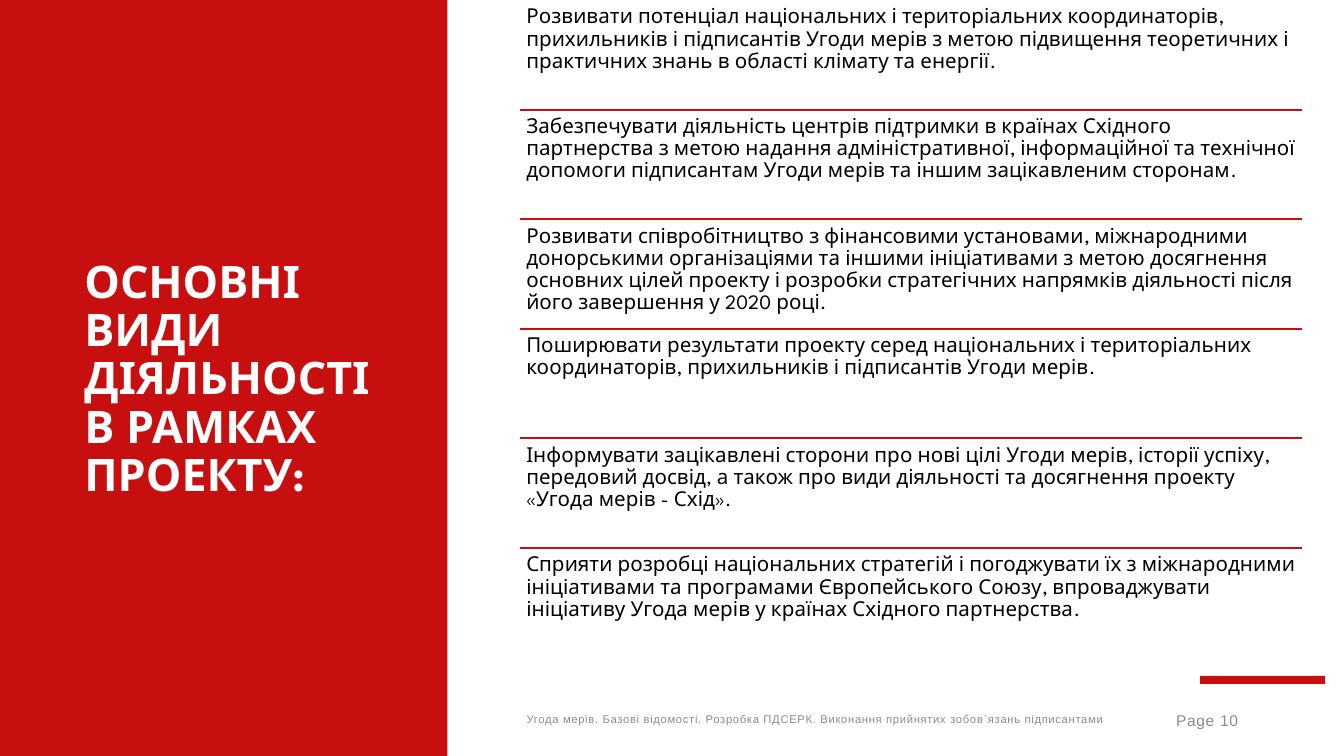
from pptx import Presentation
from pptx.dml.color import RGBColor
from pptx.enum.dml import MSO_LINE
from pptx.enum.shapes import MSO_CONNECTOR, MSO_SHAPE
from pptx.enum.text import MSO_ANCHOR, PP_ALIGN
from pptx.oxml.ns import qn
from pptx.util import Inches, Pt
from lxml import etree

RECT = MSO_SHAPE.RECTANGLE
STRAIGHT = MSO_CONNECTOR.STRAIGHT
SOLID = MSO_LINE.SOLID
TOP, MIDDLE = MSO_ANCHOR.TOP, MSO_ANCHOR.MIDDLE
LEFT, RIGHT = PP_ALIGN.LEFT, PP_ALIGN.RIGHT

THEME = {
    "red": RGBColor(0xC8, 0x0F, 0x0F),
    "white": RGBColor(0xFF, 0xFF, 0xFF),
    "black": RGBColor(0, 0, 0),
    "grey": RGBColor(0x8C, 0x8C, 0x8C),
    "main_font": "League Spartan",
    "footer_font": "Arial",
    "title_size": 24,
    "body_size": 11,
    "footer_size": 6,
    "page_size": 8.3,
}

ACTIVITIES = [
    "Розвивати потенціал національних і територіальних координаторів, прихильників і підписантів Угоди мерів з метою підвищення теоретичних і практичних знань в області клімату та енергії.",
    "Забезпечувати діяльність центрів підтримки в країнах Східного партнерства з метою надання адміністративної, інформаційної та технічної допомоги підписантам Угоди мерів та іншим зацікавленим сторонам.",
    "Розвивати співробітництво з фінансовими установами, міжнародними донорськими організаціями та іншими ініціативами з метою досягнення основних цілей проекту і розробки стратегічних напрямків діяльності після його завершення у 2020 році.",
    "Поширювати результати проекту серед національних і територіальних координаторів, прихильників і підписантів Угоди мерів.",
    "Інформувати зацікавлені сторони про нові цілі Угоди мерів, історії успіху, передовий досвід, а також про види діяльності та досягнення проекту «Угода мерів - Схід».",
    "Сприяти розробці національних стратегій і погоджувати їх з міжнародними ініціативами та програмами Європейського Союзу, впроваджувати ініціативу Угода мерів у країнах Східного партнерства.",
]

# Widescreen page, 16:9
prs = Presentation()
prs.slide_width = Inches(10)
prs.slide_height = prs.slide_width * 9 // 16
W, H = prs.slide_width, prs.slide_height
s = prs.slides.add_slide(prs.slide_layouts[6])

# Grid of the activity list: one column, equal rows from the top edge
LIST_LEFT, LIST_WIDTH = Inches(3.87), Inches(5.82)
ROW = int(H * 0.87 / len(ACTIVITIES))
INSET = Pt(3.3)
FOOTER_TOP, FOOTER_HEIGHT = Inches(5.21), Inches(0.3)


def add_bar(left, top, width, height):
    sp = s.shapes.add_shape(RECT, left, top, width, height)
    sp.shadow.inherit = False
    sp.fill.solid()
    sp.fill.fore_color.rgb = THEME["red"]
    sp.line.fill.background()


def add_text(box, text, font, size, color, anchor=MIDDLE, align=LEFT,
             line_spacing=0.9, space_after=0, bold=False, tracking=0):
    tf = s.shapes.add_textbox(*box).text_frame
    tf.word_wrap = True
    tf.vertical_anchor = anchor
    tf.text = text
    p = tf.paragraphs[0]
    p.alignment = align
    p.line_spacing = line_spacing
    p.space_after = Pt(space_after)
    r = p.runs[0]
    r.font.name, r.font.size, r.font.bold = THEME[font], Pt(THEME[size]), bold
    r.font.color.rgb = THEME[color]
    if tracking:
        r.font._element.set("spc", str(tracking))
    return tf


# Red accent and title panel
add_bar(Inches(8.93), Inches(5.03), Inches(0.93), Inches(0.06))
add_bar(Inches(-0.01), 0, Inches(3.34), H)
add_text((Inches(0.53), Inches(0.53), Inches(2.54), Inches(4.6)),
         "ОСНОВНІ ВИДИ ДІЯЛЬНОСТІ В РАМКАХ ПРОЕКТУ:",
         "main_font", "title_size", "white", bold=True)

# Footer and page number
add_text((Inches(3.82), FOOTER_TOP, Inches(4.69), FOOTER_HEIGHT),
         "Угода мерів. Базові відомості. Розробка ПДСЕРК. Виконання прийнятих зобов`язань підписантами",
         "footer_font", "footer_size", "grey", space_after=6, tracking=37)
add_text((Inches(8.64), FOOTER_TOP, Inches(0.67), FOOTER_HEIGHT), "Page 10",
         "footer_font", "page_size", "grey", align=RIGHT, line_spacing=1.0,
         space_after=6, tracking=40)

# Activities with a rule between neighbouring rows
for i, activity in enumerate(ACTIVITIES):
    top = i * ROW
    if i:
        rule = s.shapes.add_connector(STRAIGHT, LIST_LEFT, top, LIST_LEFT + LIST_WIDTH, top)
        rule.line.color.rgb = THEME["red"]
        rule.line.width = Pt(1)
        rule.line.dash_style = SOLID
        etree.SubElement(rule._element.spPr, qn("a:effectLst"))
    tf = add_text((LIST_LEFT, top, LIST_WIDTH, ROW), activity,
                  "main_font", "body_size", "black", anchor=TOP, space_after=4)
    tf.margin_left = tf.margin_right = tf.margin_top = tf.margin_bottom = INSET

prs.save("out.pptx")
